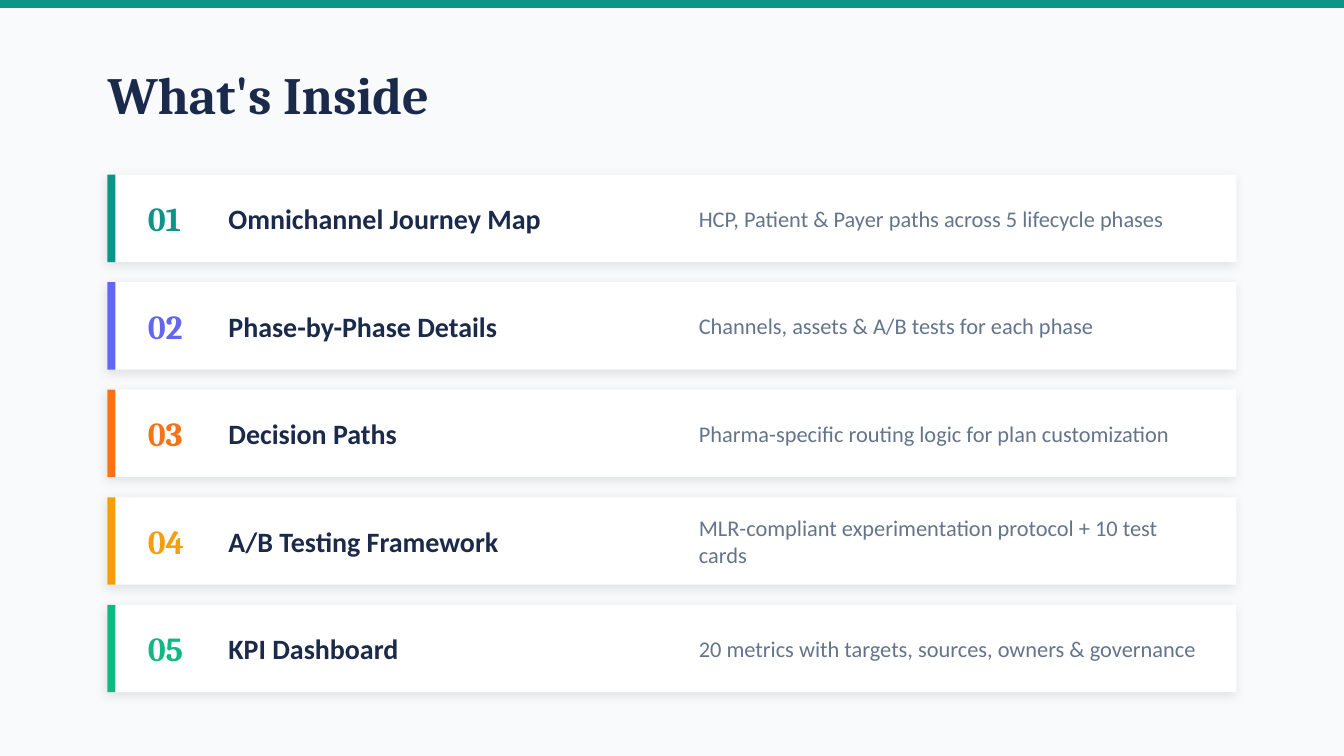
from dataclasses import dataclass

from lxml import etree
from pptx import Presentation
from pptx.dml.color import RGBColor
from pptx.enum.shapes import MSO_SHAPE
from pptx.enum.text import MSO_ANCHOR, MSO_AUTO_SIZE, PP_ALIGN
from pptx.oxml.ns import qn
from pptx.util import Inches, Pt

RECTANGLE = MSO_SHAPE.RECTANGLE
MIDDLE = MSO_ANCHOR.MIDDLE
NO_AUTOFIT = MSO_AUTO_SIZE.NONE
LEFT = PP_ALIGN.LEFT
TITLE_ONLY = 5


@dataclass(frozen=True)
class Theme:
    background: str = "F8FAFC"
    card: str = "FFFFFF"
    shadow: str = "000000"
    navy: str = "1B2A4A"
    slate: str = "64748B"
    teal: str = "0D9488"
    indigo: str = "6366F1"
    orange: str = "F97316"
    amber: str = "F59E0B"
    green: str = "10B981"
    serif: str = "Cambria"
    sans: str = "Calibri"
    title_size: int = 28
    number_size: int = 18
    heading_size: int = 15
    detail_size: int = 12


THEME = Theme()

SLIDE_WIDTH = 10
SLIDE_HEIGHT = SLIDE_WIDTH * 9 / 16
MARGIN = 0.8
ACCENT = 0.06
FIRST_ROW, ROW_PITCH, ROW_HEIGHT = 1.3, 0.8, 0.65

SECTIONS = [
    ("Omnichannel Journey Map",
     "HCP, Patient & Payer paths across 5 lifecycle phases", THEME.teal),
    ("Phase-by-Phase Details",
     "Channels, assets & A/B tests for each phase", THEME.indigo),
    ("Decision Paths",
     "Pharma-specific routing logic for plan customization", THEME.orange),
    ("A/B Testing Framework",
     "MLR-compliant experimentation protocol + 10 test cards", THEME.amber),
    ("KPI Dashboard",
     "20 metrics with targets, sources, owners & governance", THEME.green),
]


def add_bar(slide, left, top, width, height, color):
    bar = slide.shapes.add_shape(
        RECTANGLE, Inches(left), Inches(top), Inches(width), Inches(height))
    bar.shadow.inherit = False
    bar.fill.solid()
    bar.fill.fore_color.rgb = RGBColor.from_string(color)
    bar.line.fill.background()
    return bar


def add_soft_shadow(card):
    effects = card.element.spPr.find(qn("a:effectLst"))
    shadow = etree.SubElement(
        effects, qn("a:outerShdw"), blurRad=str(Pt(6)), dist=str(Pt(2)),
        dir=str(135 * 60000), algn="bl", rotWithShape="0")
    color = etree.SubElement(shadow, qn("a:srgbClr"), val=THEME.shadow)
    etree.SubElement(color, qn("a:alpha"), val="10000")


def write_text(frame, text, font_name, size, color, bold):
    """Fill a frame with one left-aligned, vertically centred paragraph."""
    frame.word_wrap = True
    frame.auto_size = NO_AUTOFIT
    frame.vertical_anchor = MIDDLE
    frame.margin_left = frame.margin_right = 0
    frame.margin_top = frame.margin_bottom = 0
    paragraph = frame.paragraphs[0]
    paragraph.alignment = LEFT
    run = paragraph.add_run()
    run.text = text
    run.font.name = font_name
    run.font.size = Pt(size)
    run.font.bold = bold
    run.font.color.rgb = RGBColor.from_string(color)


def add_title(slide, text):
    title = slide.shapes.title
    title.left, title.top = Inches(MARGIN), Inches(0.4)
    title.width, title.height = Inches(8), Inches(0.6)
    write_text(title.text_frame, text, THEME.serif, THEME.title_size,
               THEME.navy, True)


def add_row_text(slide, left, top, width, text, font_name, size, color, bold):
    label = slide.shapes.add_textbox(
        Inches(left), Inches(top), Inches(width), Inches(ROW_HEIGHT))
    write_text(label.text_frame, text, font_name, size, color, bold)


def add_section(slide, number, heading, detail, color):
    top = FIRST_ROW + (number - 1) * ROW_PITCH
    card = add_bar(slide, MARGIN, top, SLIDE_WIDTH - 2 * MARGIN, ROW_HEIGHT,
                   THEME.card)
    add_soft_shadow(card)
    add_bar(slide, MARGIN, top, ACCENT, ROW_HEIGHT, color)
    add_row_text(slide, 1.1, top, 0.5, f"{number:02d}", THEME.serif,
                 THEME.number_size, color, True)
    add_row_text(slide, 1.7, top, 3.5, heading, THEME.sans,
                 THEME.heading_size, THEME.navy, True)
    add_row_text(slide, 5.2, top, 3.8, detail, THEME.sans,
                 THEME.detail_size, THEME.slate, False)


def main():
    presentation = Presentation()
    presentation.slide_width = Inches(SLIDE_WIDTH)
    presentation.slide_height = Inches(SLIDE_HEIGHT)
    slide = presentation.slides.add_slide(
        presentation.slide_layouts[TITLE_ONLY])
    slide.background.fill.solid()
    slide.background.fill.fore_color.rgb = RGBColor.from_string(
        THEME.background)

    add_bar(slide, 0, 0, SLIDE_WIDTH, ACCENT, THEME.teal)
    add_title(slide, "What's Inside")
    for number, (heading, detail, color) in enumerate(SECTIONS, start=1):
        add_section(slide, number, heading, detail, color)

    presentation.save("out.pptx")


if __name__ == "__main__":
    main()
